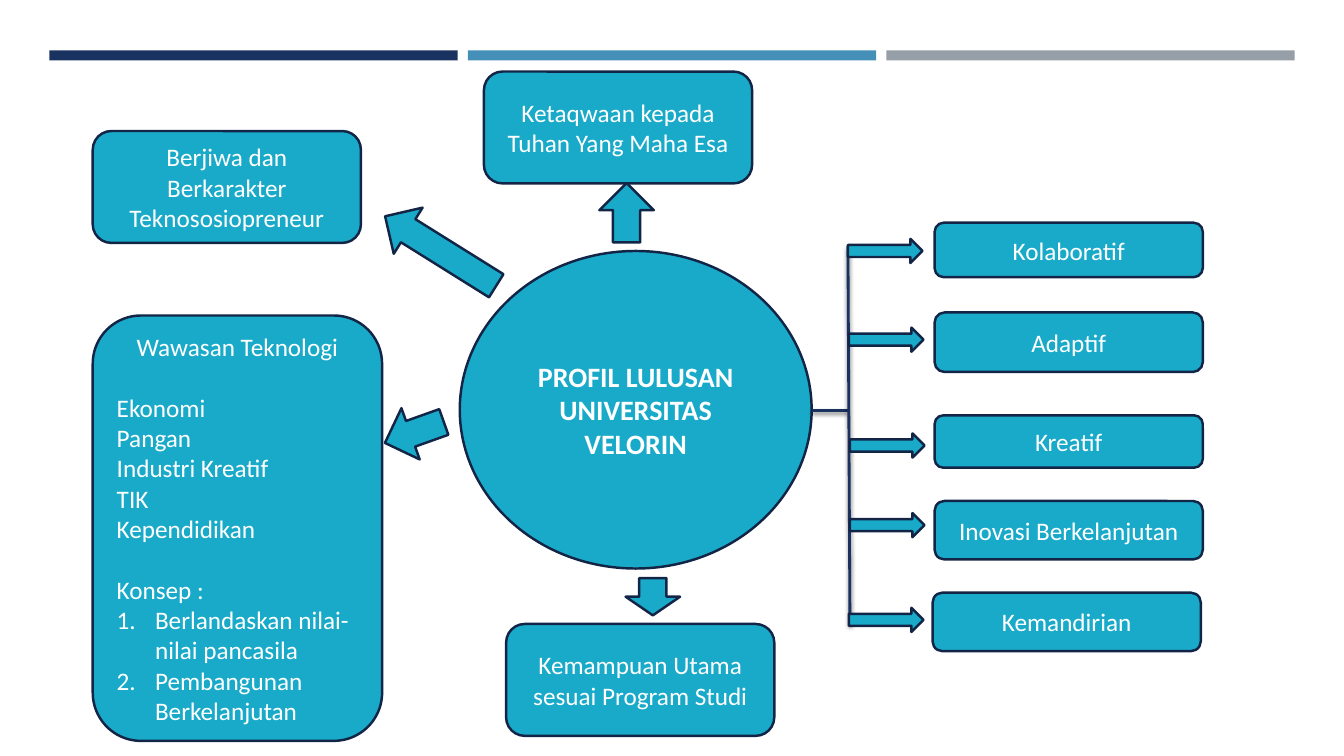
from lxml.etree import SubElement
from pptx import Presentation
from pptx.dml.color import RGBColor
from pptx.enum.shapes import MSO_CONNECTOR, MSO_SHAPE
from pptx.enum.text import MSO_ANCHOR, PP_ALIGN
from pptx.oxml.ns import qn
from pptx.util import Inches, Pt

TEAL, OUTLINE, NAVY, WHITE = "19AAC9", "132547", "1A3260", "FFFFFF"
LINE_GAP = 22


def rgb(value):
    """Turn a hex string into a colour."""
    return RGBColor.from_string(value)


def add_block(s, kind, box, fill=TEAL, line=OUTLINE, rotation=0):
    """Add a flat preset shape in a box of inches."""
    sp = s.shapes.add_shape(kind, *(Inches(v) for v in box))
    sp.shadow.inherit = False
    sp.rotation = rotation
    sp.fill.solid()
    sp.fill.fore_color.rgb = rgb(fill)
    if line:
        sp.line.color.rgb = rgb(line)
        sp.line.width = Pt(1.75)
    else:
        sp.line.fill.background()
    return sp


def add_text(p, text, size=18, bold=False, align=PP_ALIGN.CENTER):
    """Add one run of white text to a paragraph."""
    p.alignment = align
    r = p.add_run()
    r.text = text
    r.font.name = "Calibri"
    r.font.size = Pt(size)
    r.font.bold = bold
    r.font.color.rgb = rgb(WHITE)


def add_label(s, kind, box, text, size=18, bold=False):
    """Add a shape with one centred paragraph."""
    tf = add_block(s, kind, box).text_frame
    tf.word_wrap = True
    tf.vertical_anchor = MSO_ANCHOR.MIDDLE
    add_text(tf.paragraphs[0], text, size, bold)
    return tf


def number_paragraph(p):
    """Give a paragraph a hanging automatic number."""
    pPr = p._p.get_or_add_pPr()
    pPr.set("marL", str(Inches(0.38)))
    pPr.set("indent", str(-Inches(0.38)))
    SubElement(pPr, qn("a:buFont"), typeface="+mj-lt")
    SubElement(pPr, qn("a:buAutoNum"), type="arabicPeriod")


def add_line(s, start, end):
    """Add a navy line with a soft shadow below it."""
    line = s.shapes.add_connector(
        MSO_CONNECTOR.STRAIGHT, *(Inches(v) for v in (*start, *end)))
    line.line.color.rgb = rgb(NAVY)
    line.line.width = Pt(2)
    effects = SubElement(line._element.spPr, qn("a:effectLst"))
    shadow = SubElement(effects, qn("a:outerShdw"), blurRad=str(Pt(3)),
                        dist=str(Pt(2)), dir="5400000", rotWithShape="0")
    color = SubElement(shadow, qn("a:srgbClr"), val="000000")
    SubElement(color, qn("a:alpha"), val="55000")


def add_header(s, left, top, width):
    """Draw three coloured bars across the given width."""
    gap = 0.1
    bar = (width - 2 * gap) / 3
    for i, fill in enumerate((NAVY, "4590B8", "969FA7")):
        box = (left + i * (bar + gap), top, bar, 0.1)
        add_block(s, MSO_SHAPE.RECTANGLE, box, fill, None)


def add_insight(s, box):
    """Draw the technology panel with its topics and concepts."""
    tf = add_label(s, MSO_SHAPE.ROUNDED_RECTANGLE, box, "Wawasan Teknologi")
    topics = ("Ekonomi", "Pangan", "Industri Kreatif", "TIK", "Kependidikan")
    concepts = ("Berlandaskan nilai-nilai pancasila",
                "Pembangunan Berkelanjutan")
    for text in (*topics, "Konsep :", *concepts):
        p = tf.add_paragraph()
        add_text(p, text, align=PP_ALIGN.LEFT)
        if text in (topics[0], "Konsep :"):
            p.space_before = Pt(LINE_GAP)
        if text in concepts:
            number_paragraph(p)


def add_profile(s, left, top):
    """Draw the central circle, its outer labels and the arrows to them."""
    add_label(s, MSO_SHAPE.OVAL, (left, top, 3.49, 3.15),
              "PROFIL LULUSAN UNIVERSITAS VELORIN", 20, True)
    for dx, dy, text in (
            (-3.64, -1.19, "Berjiwa dan Berkarakter Teknososiopreneur"),
            (0.24, -1.78, "Ketaqwaan kepada Tuhan Yang Maha Esa"),
            (0.46, 3.7, "Kemampuan Utama sesuai Program Studi")):
        add_label(s, MSO_SHAPE.ROUNDED_RECTANGLE,
                  (left + dx, top + dy, 2.66, 1.11), text)
    add_insight(s, (left - 3.64, top + 0.64, 2.87, 4.22))
    for dx, dy, length, angle in ((-0.84, -0.27, 1.3, 212),
                                  (-0.76, 1.53, 0.62, 160.4),
                                  (1.73, 3.16, 0.37, 90),
                                  (1.36, -0.65, 0.59, 270)):
        add_block(s, MSO_SHAPE.RIGHT_ARROW,
                  (left + dx, top + dy, length, 0.54), rotation=angle)


def add_traits(s, left, top):
    """Draw the bracket and the five traits it leads to."""
    add_line(s, (left, top + 1.86), (left + 0.36, top + 1.86))
    add_line(s, (left + 0.36, top + 0.23), (left + 0.38, top + 3.98))
    for text, dx, dy, height, arrow_dx, arrow_dy in (
            ("Kolaboratif", 1.22, 0, 0.54, 0.36, 0.16),
            ("Adaptif", 1.22, 0.89, 0.59, 0.37, 1.04),
            ("Kreatif", 1.22, 1.91, 0.52, 0.38, 2.09),
            ("Inovasi Berkelanjutan", 1.22, 2.76, 0.58, 0.38, 2.88),
            ("Kemandirian", 1.2, 3.67, 0.58, 0.37, 3.82)):
        add_label(s, MSO_SHAPE.ROUNDED_RECTANGLE,
                  (left + dx, top + dy, 2.66, height), text)
        add_block(s, MSO_SHAPE.RIGHT_ARROW,
                  (left + arrow_dx, top + arrow_dy, 0.74, 0.24))


def main():
    """Build and save the graduate profile slide."""
    prs = Presentation()
    prs.slide_width, prs.slide_height = Inches(13.33), Inches(7.5)
    s = prs.slides.add_slide(prs.slide_layouts[6])
    add_header(s, 0.49, 0.5, 12.35)
    add_profile(s, 4.56, 2.49)
    add_traits(s, 8.05, 2.21)
    prs.save("out.pptx")


if __name__ == "__main__":
    main()
